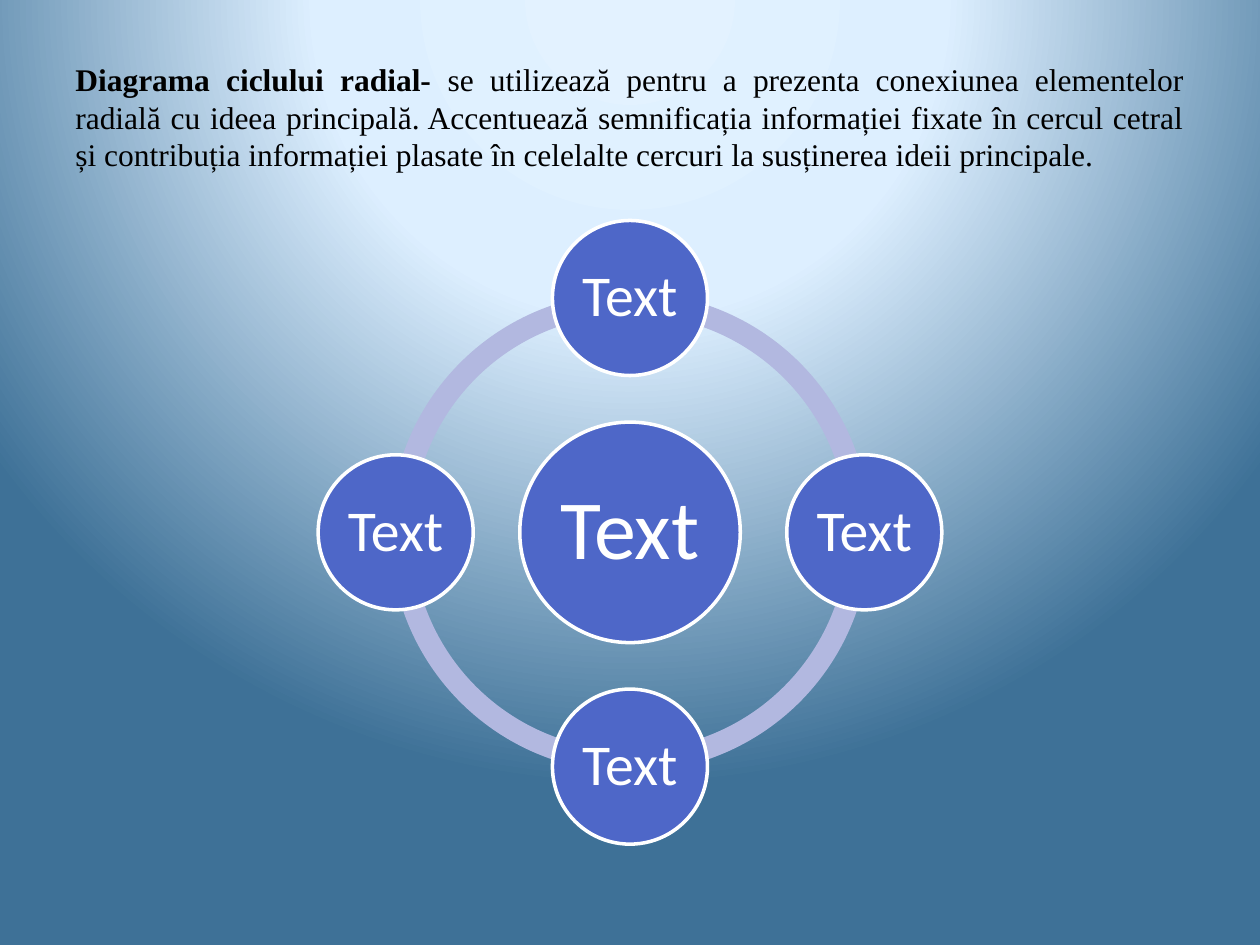
from math import cos, radians, sin

from pptx import Presentation
from pptx.dml.color import RGBColor
from pptx.enum.shapes import MSO_SHAPE as Shape
from pptx.enum.text import MSO_ANCHOR as Anchor, PP_ALIGN as Align
from pptx.oxml import parse_xml
from pptx.oxml.ns import nsdecls
from pptx.util import Pt

BACKGROUND_STOPS = [(0, "E3F2FF"), (40, "DDEFFF"), (100, "3E7197")]
CIRCLE_FILL, RING_FILL, WHITE, BLACK = "4E67C8", "B2B8E0", "FFFFFF", "000000"

HEADING = "Diagrama ciclului radial- "
DESCRIPTION = (
    "se utilizează pentru a prezenta conexiunea elementelor radială cu ideea "
    "principală. Accentuează semnificația informației fixate în cercul cetral "
    "și contribuția informației plasate în celelalte cercuri la susținerea "
    "ideii principale."
)

CENTER_X, CENTER_Y = 360, 304.2
RING_SIZE = 274.3
ORBIT_RADIUS = 133.9
HUB_SIZE, SATELLITE_SIZE = 126, 88.6
LABEL_INSET = 3
# Arc angles are in units of 100000/60000 degrees: 54 is a quarter turn.
QUARTER, FULL_TURN = 54, 216


def color(hex_value):
    return RGBColor.from_string(hex_value)


def style_font(run, name, size, hex_value, bold=False):
    run.font.name = name
    run.font.size = Pt(size)
    run.font.bold = bold
    run.font.color.rgb = color(hex_value)


def set_background(slide):
    """Fill the slide with a radial gradient centred above its top edge."""
    stops = "".join(
        f'<a:gs pos="{percent * 1000}"><a:srgbClr val="{hex_value}"/></a:gs>'
        for percent, hex_value in BACKGROUND_STOPS
    )
    background = parse_xml(
        f'<p:bg {nsdecls("p", "a")}><p:bgPr><a:gradFill rotWithShape="1">'
        f'<a:gsLst>{stops}</a:gsLst><a:path path="circle">'
        '<a:fillToRect l="50000" t="-80000" r="50000" b="180000"/>'
        "</a:path></a:gradFill><a:effectLst/></p:bgPr></p:bg>"
    )
    slide.element.cSld.insert(0, background)


def add_description(slide):
    box = slide.shapes.add_textbox(Pt(36), Pt(21.6), Pt(648), Pt(90))
    frame = box.text_frame
    frame.word_wrap = True
    frame.vertical_anchor = Anchor.MIDDLE
    paragraph = frame.paragraphs[0]
    paragraph.alignment = Align.JUSTIFY
    for wording, bold in [(HEADING, True), (DESCRIPTION, False)]:
        run = paragraph.add_run()
        run.text = wording
        style_font(run, "Times New Roman", 18, BLACK, bold)


def add_centered(diagram, preset, x, y, size, fill):
    """Add a square-boxed shape around the point x, y."""
    shape = diagram.shapes.add_shape(
        preset, Pt(x - size / 2), Pt(y - size / 2), Pt(size), Pt(size)
    )
    shape.shadow.inherit = False
    shape.fill.solid()
    shape.fill.fore_color.rgb = color(fill)
    return shape


def add_ring_quarter(diagram, start):
    arc = add_centered(
        diagram, Shape.BLOCK_ARC, CENTER_X, CENTER_Y, RING_SIZE, RING_FILL
    )
    arc.line.fill.background()
    arc.adjustments[0] = start
    arc.adjustments[1] = (start + QUARTER) % FULL_TURN
    arc.adjustments[2] = 0.046


def add_circle(diagram, x, y, size, label, font_size):
    circle = add_centered(diagram, Shape.OVAL, x, y, size, CIRCLE_FILL)
    circle.line.color.rgb = color(WHITE)
    circle.line.width = Pt(2)
    frame = circle.text_frame
    frame.text = label
    frame.word_wrap = True
    frame.vertical_anchor = Anchor.MIDDLE
    frame.margin_left = frame.margin_right = Pt(LABEL_INSET)
    frame.margin_top = frame.margin_bottom = Pt(LABEL_INSET)
    paragraph = frame.paragraphs[0]
    paragraph.alignment = Align.CENTER
    paragraph.line_spacing = 0.9
    style_font(paragraph.runs[0], "Calibri", font_size, WHITE)


def add_radial_cycle(slide):
    diagram = slide.shapes.add_group_shape()
    for start in (108, 54, 0, 162):
        add_ring_quarter(diagram, start)
    add_circle(diagram, CENTER_X, CENTER_Y, HUB_SIZE, "Text", 48)
    for degrees in (-90, 0, 90, 180):
        x = CENTER_X + ORBIT_RADIUS * cos(radians(degrees))
        y = CENTER_Y + ORBIT_RADIUS * sin(radians(degrees))
        add_circle(diagram, x, y, SATELLITE_SIZE, "Text", 33)


def main():
    deck = Presentation()
    deck.slide_width, deck.slide_height = Pt(720), Pt(540)
    slide = deck.slides.add_slide(deck.slide_layouts[6])
    set_background(slide)
    add_description(slide)
    add_radial_cycle(slide)
    deck.save("out.pptx")


if __name__ == "__main__":
    main()
